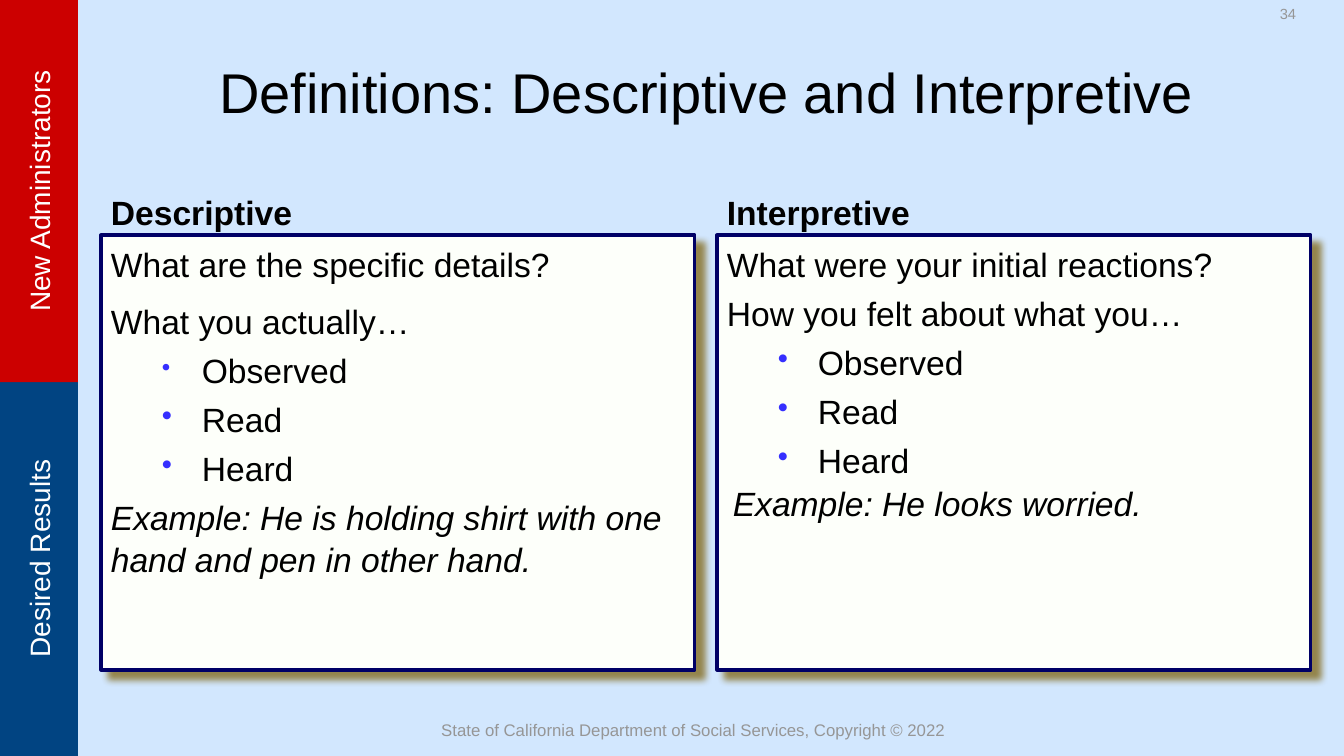
"""Build the slide that defines descriptive and interpretive statements."""
from dataclasses import dataclass

from lxml.etree import SubElement
from pptx import Presentation
from pptx.dml.color import RGBColor
from pptx.enum.shapes import MSO_SHAPE as Preset
from pptx.enum.text import MSO_ANCHOR as Anchor, PP_ALIGN as Align
from pptx.oxml.ns import qn
from pptx.util import Emu, Pt

TITLE = "Definitions: Descriptive and Interpretive"
FOOTER = "State of California Department of Social Services, Copyright © 2022"
PAGE_NUMBER = "34"
BANDS = [("Desired Results", 361, 395, "014482"), ("New Administrators", 0, 382, "CC0000")]
PANELS = [
    ("Descriptive", [
        ("plain", "What are the specific details?"),
        ("apart", "What you actually…"),
        ("small bullet", "Observed"),
        ("bullet", "Read"),
        ("bullet", "Heard"),
        ("example", "Example: He is holding shirt with one hand and pen in other hand."),
    ]),
    ("Interpretive", [
        ("plain", "What were your initial reactions?"),
        ("plain", "How you felt about what you…"),
        ("bullet", "Observed"),
        ("bullet", "Read"),
        ("bullet", "Heard"),
        ("tight example", "Example: He looks worried."),
    ]),
]


@dataclass(frozen=True)
class Theme:
    font: str = "Arial"
    background: str = "D2E7FE"
    ink: str = "000000"
    light: str = "FFFFFF"
    muted: str = "969696"
    panel: str = "FDFFFA"
    border: str = "000066"
    shadow: str = "806512"
    bullet: str = "352FFF"
    title_size: float = 40
    body_size: float = 24
    band_size: float = 20
    footer_size: float = 12
    number_size: float = 10.5


THEME = Theme()
SLIDE_W, SLIDE_H = 1344, 756
BAND_W = 78
PANEL_X, PANEL_STEP, PANEL_W = 101, 616, 594
HEADING_Y, PANEL_Y, PANEL_H = 164, 235, 435
LINE_SPACING = 1.06
GAP_BEFORE = {"plain": 4.4, "apart": 10, "small bullet": 4.4, "bullet": 4.4,
              "example": 4.4, "tight example": 0}
BULLET_SIZE = {"small bullet": 75, "bullet": 90}
INDENT = {"small bullet": (91, -40), "bullet": (91, -40), "tight example": (6, 0)}


def px(length):
    return Emu(round(length * 914400 / 100.8))


def rgb(value):
    return RGBColor.from_string(value)


def add_run(para, text, size, color, bold=False, italic=False):
    span = para.add_run()
    span.text = text
    span.font.name = THEME.font
    span.font.size = Pt(size)
    span.font.bold = bold
    span.font.italic = italic
    span.font.color.rgb = rgb(color)


def add_label(page, area, text, size, color, align=Align.CENTER,
              anchor=Anchor.MIDDLE, bold=False):
    box = page.shapes.add_textbox(*map(px, area))
    frame = box.text_frame
    frame.word_wrap = True
    frame.vertical_anchor = anchor
    para = frame.paragraphs[0]
    para.alignment = align
    add_run(para, text, size, color, bold)
    return box


def add_rect(page, area, color):
    box = page.shapes.add_shape(Preset.RECTANGLE, *map(px, area))
    box.shadow.inherit = False
    box.fill.solid()
    box.fill.fore_color.rgb = rgb(color)
    box.line.fill.background()
    return box


def add_band(page, text, top, length, color):
    left = (BAND_W - length) / 2
    box = add_rect(page, (left, top - left, length, BAND_W), color)
    box.rotation = 270
    box.text_frame.vertical_anchor = Anchor.MIDDLE
    para = box.text_frame.paragraphs[0]
    para.alignment = Align.CENTER
    add_run(para, text, THEME.band_size, THEME.light)


def add_shadow(box):
    effects = box._element.spPr.find(qn("a:effectLst"))
    shadow = SubElement(effects, qn("a:outerShdw"), blurRad=str(Pt(5)), dist=str(Pt(8.5)),
                        dir="2700000", algn="tl", rotWithShape="0")
    color = SubElement(shadow, qn("a:srgbClr"), val=THEME.shadow)
    SubElement(color, qn("a:alpha"), val="75000")


def format_line(para, kind):
    props = para._p.get_or_add_pPr()
    margin, hanging = INDENT.get(kind, (0, 0))
    props.set("marL", str(px(margin)))
    props.set("indent", str(px(hanging)))
    if kind in BULLET_SIZE:
        color = SubElement(props, qn("a:buClr"))
        SubElement(color, qn("a:srgbClr"), val=THEME.bullet)
        SubElement(props, qn("a:buSzPct"), val=str(BULLET_SIZE[kind] * 1000))
        SubElement(props, qn("a:buChar"), char="•")
    para.alignment = Align.LEFT
    para.line_spacing = LINE_SPACING


def add_panel(page, left, heading, lines):
    label = add_label(page, (left, HEADING_Y, PANEL_W, PANEL_Y - HEADING_Y), heading,
                      THEME.body_size, THEME.ink, Align.LEFT, Anchor.BOTTOM, bold=True)
    label.text_frame.margin_bottom = px(3)
    box = add_rect(page, (left, PANEL_Y, PANEL_W, PANEL_H), THEME.panel)
    box.line.color.rgb = rgb(THEME.border)
    box.line.width = Pt(2.25)
    add_shadow(box)
    frame = box.text_frame
    frame.word_wrap = True
    frame.vertical_anchor = Anchor.TOP
    frame.margin_top = px(7)
    for index, (kind, text) in enumerate(lines):
        para = frame.add_paragraph() if index else frame.paragraphs[0]
        format_line(para, kind)
        para.space_before = Pt(GAP_BEFORE[kind] if index else 0)
        add_run(para, text, THEME.body_size, THEME.ink, italic="example" in kind)


def main():
    deck = Presentation()
    deck.slide_width, deck.slide_height = px(SLIDE_W), px(SLIDE_H)
    page = deck.slides.add_slide(deck.slide_layouts[6])
    page.background.fill.solid()
    page.background.fill.fore_color.rgb = rgb(THEME.background)
    for band in BANDS:
        add_band(page, *band)
    add_label(page, (101, 28, 1210, 126), TITLE, THEME.title_size, THEME.ink)
    for index, (heading, lines) in enumerate(PANELS):
        add_panel(page, PANEL_X + index * PANEL_STEP, heading, lines)
    add_label(page, (429, 713, 529, 33), FOOTER, THEME.footer_size, THEME.muted)
    add_label(page, (1232, 0, 112, 33), PAGE_NUMBER, THEME.number_size, THEME.muted,
              anchor=Anchor.TOP)
    deck.save("out.pptx")


if __name__ == "__main__":
    main()
